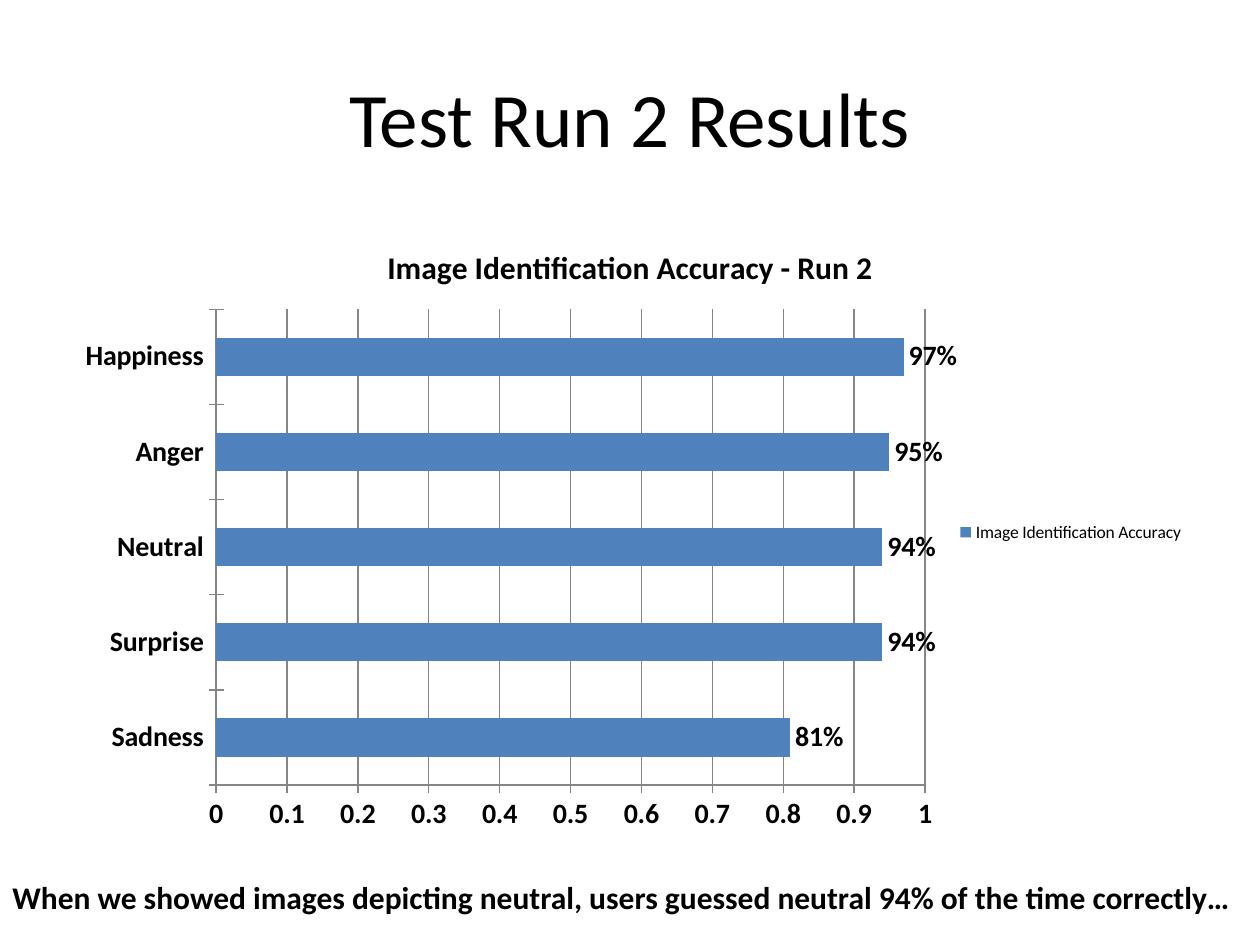
from pptx import Presentation
from pptx.chart.data import CategoryChartData
from pptx.dml.color import RGBColor
from pptx.enum.chart import XL_CHART_TYPE, XL_LABEL_POSITION, XL_LEGEND_POSITION, XL_TICK_MARK
from pptx.enum.text import MSO_ANCHOR, MSO_AUTO_SIZE, PP_ALIGN
from pptx.util import Pt

HEADING = "Test Run 2 Results"
CHART_HEADING = "Image Identification Accuracy - Run 2"
SERIES_NAME = "Image Identification Accuracy"
ACCURACY = {
    "Sadness": 0.81,
    "Surprise": 0.94,
    "Neutral": 0.94,
    "Anger": 0.95,
    "Happiness": 0.97,
}
CONCLUSION = ("When we showed images depicting neutral, "
              "users guessed neutral 94% of the time correctly…")

FONT = "Calibri"
COLORS = {"text": "000000", "bar": "4F81BD", "grid": "868686"}
SLIDE_WIDTH, SLIDE_HEIGHT = 720, 540
MARGIN = 36
CONTENT_WIDTH = SLIDE_WIDTH - 2 * MARGIN


def color(name):
    return RGBColor.from_string(COLORS[name])


def style(font, size, bold=False):
    font.name = FONT
    font.size = Pt(size)
    font.bold = bold
    font.color.rgb = color("text")


def add_run(paragraph, text, size, bold=False):
    run = paragraph.add_run()
    run.text = text
    style(run.font, size, bold)


def place(shape, left, top, width, height):
    shape.left, shape.top = Pt(left), Pt(top)
    shape.width, shape.height = Pt(width), Pt(height)


def add_heading(slide):
    heading = slide.shapes.title
    place(heading, MARGIN, 21.6, CONTENT_WIDTH, 90)
    heading.text_frame.vertical_anchor = MSO_ANCHOR.MIDDLE
    paragraph = heading.text_frame.paragraphs[0]
    paragraph.alignment = PP_ALIGN.CENTER
    add_run(paragraph, HEADING, 44)


def add_accuracy_chart(slide):
    data = CategoryChartData()
    data.categories = list(ACCURACY)
    data.add_series(SERIES_NAME, list(ACCURACY.values()))
    chart = slide.shapes.add_chart(
        XL_CHART_TYPE.BAR_CLUSTERED,
        Pt(MARGIN), Pt(126), Pt(CONTENT_WIDTH), Pt(356.4), data).chart
    style(chart.font, 10)

    chart.has_title = True
    add_run(chart.chart_title.text_frame.paragraphs[0], CHART_HEADING, 18, True)
    chart.chart_title.include_in_layout = False

    chart.has_legend = True
    chart.legend.position = XL_LEGEND_POSITION.RIGHT
    chart.legend.include_in_layout = False

    for axis in (chart.category_axis, chart.value_axis):
        style(axis.tick_labels.font, 16, True)
        axis.major_tick_mark = XL_TICK_MARK.CROSS
        axis.minor_tick_mark = XL_TICK_MARK.NONE
        axis.format.line.color.rgb = color("grid")

    scale = chart.value_axis
    scale.minimum_scale, scale.maximum_scale, scale.major_unit = 0, 1, 0.1
    scale.has_major_gridlines = True
    scale.major_gridlines.format.line.color.rgb = color("grid")

    bars = chart.plots[0]
    bars.vary_by_categories = False
    bars.gap_width = 150
    accuracy = bars.series[0]
    accuracy.format.fill.solid()
    accuracy.format.fill.fore_color.rgb = color("bar")

    labels = accuracy.data_labels
    labels.show_value = True
    labels.number_format = "0%"
    labels.number_format_is_linked = False
    labels.position = XL_LABEL_POSITION.OUTSIDE_END
    style(labels.font, 16, True)


def add_conclusion(slide):
    conclusion = slide.shapes.add_textbox(Pt(0), Pt(498.2), Pt(SLIDE_WIDTH), Pt(29))
    frame = conclusion.text_frame
    frame.word_wrap = True
    frame.auto_size = MSO_AUTO_SIZE.SHAPE_TO_FIT_TEXT
    add_run(frame.paragraphs[0], CONCLUSION, 18, True)


def main():
    deck = Presentation()
    deck.slide_width, deck.slide_height = Pt(SLIDE_WIDTH), Pt(SLIDE_HEIGHT)
    slide = deck.slides.add_slide(deck.slide_layouts.get_by_name("Title Only"))
    add_heading(slide)
    add_accuracy_chart(slide)
    add_conclusion(slide)
    deck.save("out.pptx")


if __name__ == "__main__":
    main()
